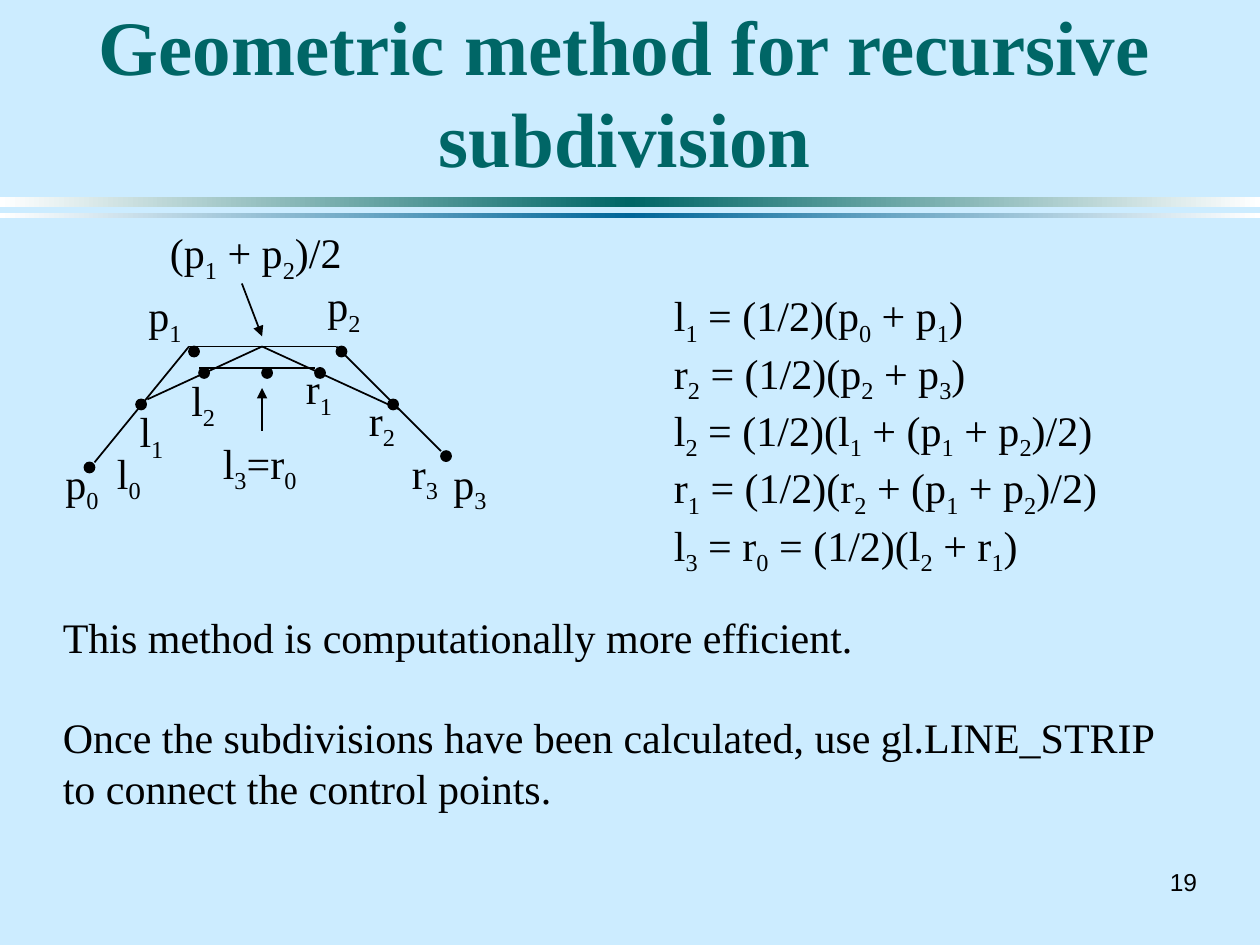
from itertools import pairwise

from lxml.etree import SubElement
from pptx import Presentation
from pptx.dml.color import RGBColor
from pptx.enum.shapes import MSO_CONNECTOR, MSO_SHAPE
from pptx.enum.text import MSO_ANCHOR, MSO_AUTO_SIZE, PP_ALIGN
from pptx.oxml import parse_xml
from pptx.oxml.ns import nsdecls, qn
from pptx.util import Inches, Pt

COLORS = {
    "background": "CCECFF",
    "ink": "000000",
    "title": "006666",
    "blue": "006699",
    "white": "FFFFFF",
}
SERIF, SANS = "Times New Roman", "Arial"
DOT = 0.08


def rgb(name):
    return RGBColor.from_string(COLORS[name])


def add_runs(p, text, size=24, font=SERIF, color="ink", bold=False):
    """Write text into p; a digit after ~ becomes a subscript."""
    def add(part, subscript=False):
        if not part:
            return
        r = p.add_run()
        r.text = part
        r.font.size, r.font.name, r.font.bold = Pt(size), font, bold
        r.font.color.rgb = rgb(color)
        if subscript:
            r._r.get_or_add_rPr().set("baseline", "-25000")

    first, *rest = text.split("~")
    add(first)
    for part in rest:
        add(part[0], subscript=True)
        add(part[1:])


class SlideBuilder:
    def __init__(self, prs):
        self.s = prs.slides.add_slide(prs.slide_layouts[6])
        self.s.background.fill.solid()
        self.s.background.fill.fore_color.rgb = rgb("background")

    def text(self, x, y, w, h, *lines, wrap=False, anchor=MSO_ANCHOR.TOP,
             align=PP_ALIGN.LEFT, gap=0, grow=True, **style):
        sp = self.s.shapes.add_textbox(Inches(x), Inches(y), Inches(w), Inches(h))
        tf = sp.text_frame
        tf.word_wrap = wrap
        tf.vertical_anchor = anchor
        tf.auto_size = MSO_AUTO_SIZE.SHAPE_TO_FIT_TEXT if grow else MSO_AUTO_SIZE.NONE
        for i, line in enumerate(lines):
            p = tf.add_paragraph() if i else tf.paragraphs[0]
            p.alignment = align
            if i and gap:
                p.space_before = Pt(gap)
            add_runs(p, line, **style)

    def shape(self, kind, x, y, w, h):
        sp = self.s.shapes.add_shape(kind, Inches(x), Inches(y), Inches(w), Inches(h))
        sp.shadow.inherit = False
        return sp

    def band(self, y, h, color):
        """Full-width bar that fades from white to color and back."""
        sp = self.shape(MSO_SHAPE.RECTANGLE, 0, y, 10, h)
        sp.line.fill.background()
        sp.fill.gradient()
        sp.fill.gradient_angle = 0
        stops = sp._element.spPr.find(qn("a:gradFill")).find(qn("a:gsLst"))
        for stop in list(stops):
            stops.remove(stop)
        for pos, name in ((0, "white"), (50, color), (100, "white")):
            stops.append(parse_xml(
                f'<a:gs {nsdecls("a")} pos="{pos * 1000}">'
                f'<a:srgbClr val="{COLORS[name]}"/></a:gs>'))

    def dot(self, x, y):
        sp = self.shape(MSO_SHAPE.OVAL, x, y, DOT, DOT)
        sp.fill.solid()
        sp.fill.fore_color.rgb = rgb("ink")
        sp.line.color.rgb = rgb("ink")
        sp.line.width = Pt(1)

    def line(self, start, end, arrow=False):
        c = self.s.shapes.add_connector(
            MSO_CONNECTOR.STRAIGHT, *(Inches(v) for v in (*start, *end)))
        c.line.color.rgb = rgb("ink")
        c.line.width = Pt(1)
        if arrow:
            SubElement(c.line._get_or_add_ln(), qn("a:tailEnd"), type="triangle")
        SubElement(c._element.spPr, qn("a:effectLst"))


def main():
    prs = Presentation()
    prs.slide_width, prs.slide_height = Inches(10), Inches(7.5)
    slide = SlideBuilder(prs)

    slide.band(1.56, 0.08, "title")
    slide.band(1.69, 0.04, "blue")
    slide.text(9.17, 6.83, 0.43, 0.33, "19", anchor=MSO_ANCHOR.MIDDLE,
               align=PP_ALIGN.RIGHT, size=14, font=SANS)
    slide.text(0.67, 0.25, 8.58, 1.25, "Geometric method for recursive subdivision",
               wrap=True, grow=False, anchor=MSO_ANCHOR.BOTTOM,
               align=PP_ALIGN.CENTER, size=44, color="title", bold=True)

    p1, p2, p3 = (1.5, 2.75), (2.67, 2.75), (3.5, 3.58)
    l2, l3, r1 = (1.58, 2.92), (2.08, 2.92), (2.5, 2.92)
    middle = (2.08, 2.75)
    polylines = [
        [(0.75, 3.67), p1, p2, p3],
        [(1.17, 3.17), middle, (3.17, 3.25)],
        [l2, l3, r1],
    ]
    for points in polylines:
        for start, end in pairwise(points):
            slide.line(start, end)
    for point in [(0.67, 3.67), p1, p2, p3, (1.08, 3.17), (3.08, 3.17), l2, r1, l3]:
        slide.dot(*point)
    slide.line((2.08, 3.42), (2.08, 3.08), arrow=True)
    slide.line((1.92, 2.25), (2.08, 2.67), arrow=True)

    labels = [
        ("p~0", 0.42, 3.58, 0.48), ("p~1", 1.08, 2.25, 0.48),
        ("p~2", 2.5, 2.17, 0.48), ("p~3", 3.5, 3.58, 0.48),
        ("l~0", 0.83, 3.5, 0.4), ("l~1", 1.01, 3.17, 0.4),
        ("l~2", 1.42, 2.92, 0.4), ("l~3=r~0", 1.67, 3.42, 0.81),
        ("r~3", 3.17, 3.5, 0.42), ("r~2", 2.83, 3.08, 0.42),
        ("r~1", 2.33, 2.83, 0.42), ("(p~1 + p~2)/2", 1.25, 1.75, 1.59),
    ]
    for label, x, y, w in labels:
        slide.text(x, y, w, 0.5, label)

    slide.text(5.25, 2.25, 3.61, 2.1,
               "l~1 = (1/2)(p~0 + p~1)",
               "r~2 = (1/2)(p~2 + p~3)",
               "l~2 = (1/2)(l~1 + (p~1 + p~2)/2)",
               "r~1 = (1/2)(r~2 + (p~1 + p~2)/2)",
               "l~3 = r~0 = (1/2)(l~2 + r~1)")
    slide.text(0.4, 4.8, 9.18, 1.72,
               "This method is computationally more efficient.",
               "Once the subdivisions have been calculated, use gl.LINE_STRIP "
               "to connect the control points.",
               wrap=True, gap=28.8)
    prs.save("out.pptx")


if __name__ == "__main__":
    main()
